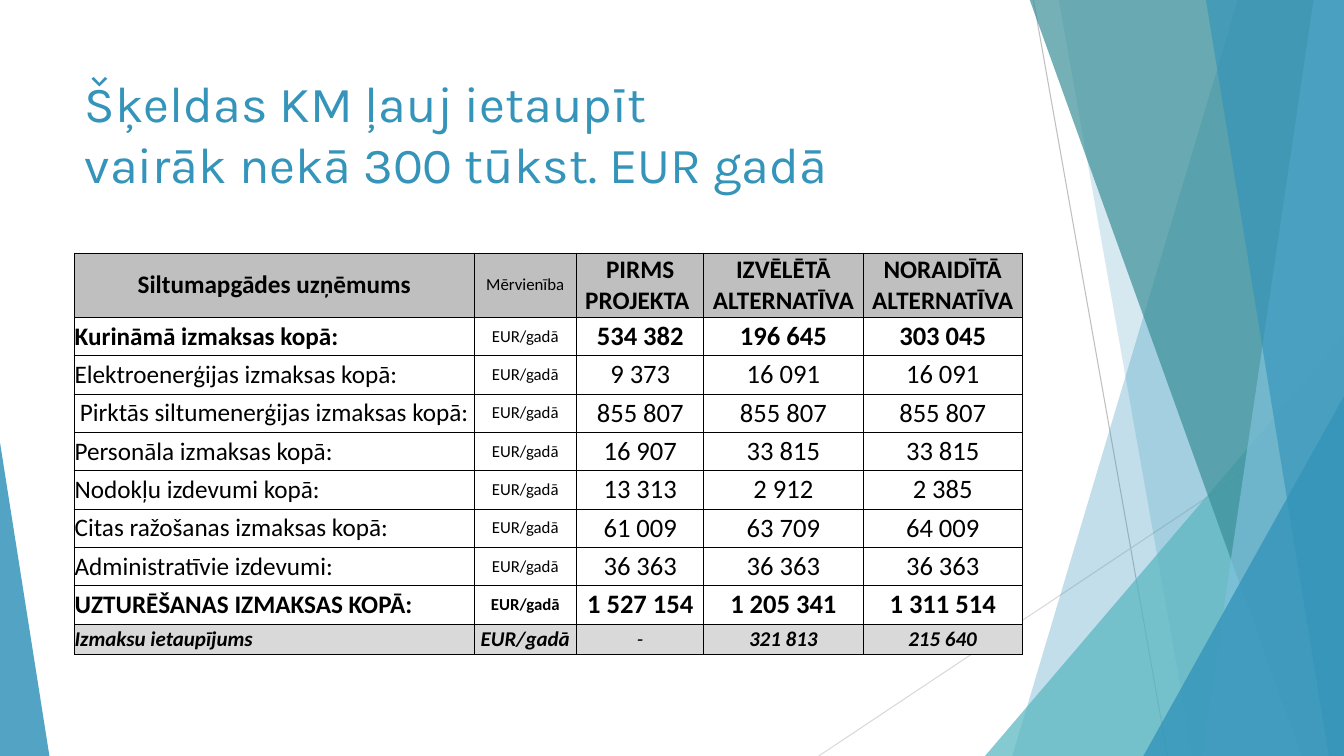
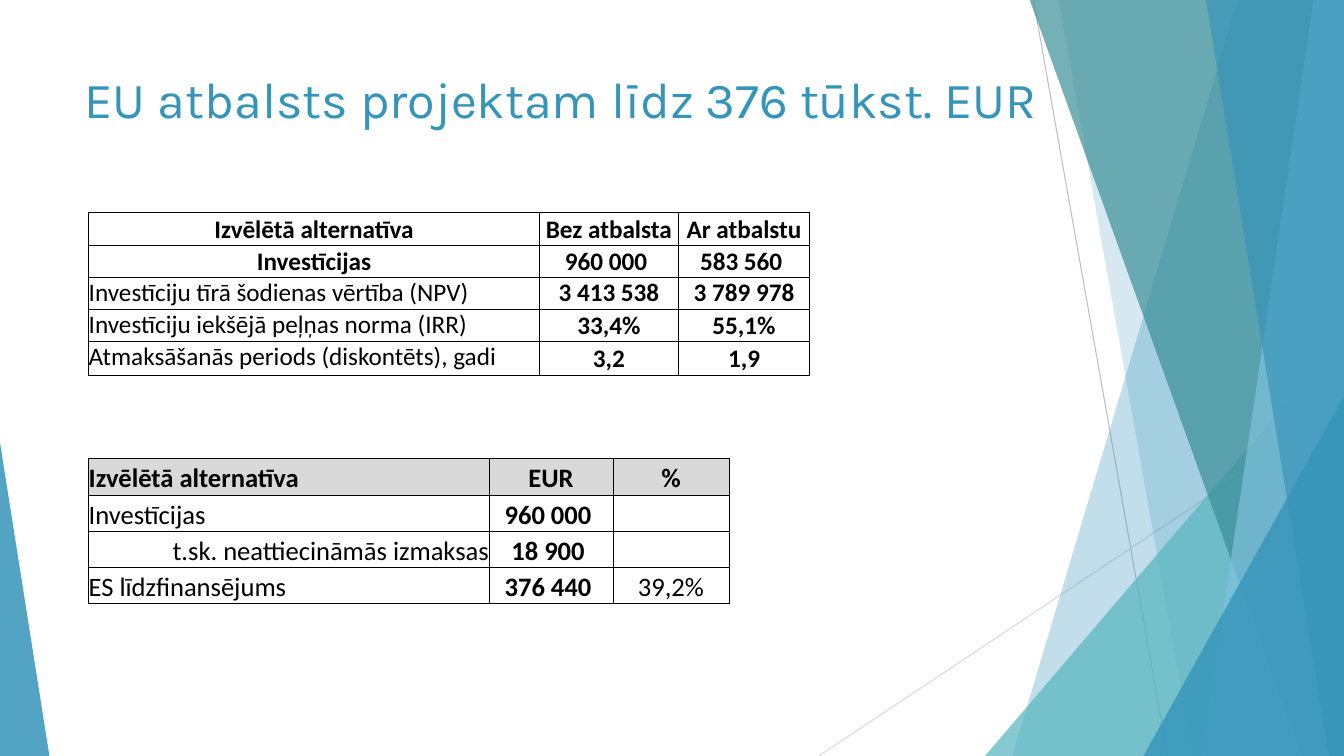
from pptx import Presentation
from pptx.dml.color import RGBColor
from pptx.enum.shapes import MSO_CONNECTOR, MSO_SHAPE
from pptx.enum.text import MSO_ANCHOR, MSO_AUTO_SIZE, PP_ALIGN
from pptx.oxml.ns import qn
from pptx.oxml.xmlchemy import OxmlElement
from pptx.util import Pt

PX = 9144
WIDE, HIGH = 1333, 750
LEFT, CENTER, RIGHT = PP_ALIGN.LEFT, PP_ALIGN.CENTER, PP_ALIGN.RIGHT
TOP, MIDDLE, BOTTOM = MSO_ANCHOR.TOP, MSO_ANCHOR.MIDDLE, MSO_ANCHOR.BOTTOM
STRAIGHT = MSO_CONNECTOR.STRAIGHT
PEAK = MSO_SHAPE.ISOSCELES_TRIANGLE
FIT = MSO_AUTO_SIZE.NONE
BLUE, AQUA, TEAL, SKY = "3494BA", "58B6C0", "3A8F98", "7FC1DB"
BLACK, WHITE, GREY, PALE = "000000", "FFFFFF", "BFBFBF", "D9D9D9"


def paint(color, shade):
    color.rgb = RGBColor.from_string(shade)


def grid(slide, left, top, cols, rows, data, rim):
    frame = slide.shapes.add_table(len(rows), len(cols), left * PX, top * PX,
                                   sum(cols) * PX, sum(rows) * PX)
    table = frame.table
    table.first_row = table.horz_banding = False
    for col, width in enumerate(cols):
        table.columns[col].width = width * PX
    for row, height in enumerate(rows):
        table.rows[row].height = height * PX
        for col, text in enumerate(data[row]):
            cell = table.cell(row, col)
            cell.margin_left = cell.margin_right = 0
            cell.margin_top = cell.margin_bottom = 0
            sides = {"L": col == 0, "R": col == len(cols) - 1,
                     "T": row == 0, "B": row == len(rows) - 1}
            for side, outer in sides.items():
                line = OxmlElement("a:ln" + side)
                line.set("w", str(Pt(rim if outer else 0.5)))
                fill = OxmlElement("a:solidFill")
                ink = OxmlElement("a:srgbClr")
                ink.set("val", BLACK)
                fill.append(ink)
                line.append(fill)
                cell._tc.get_or_add_tcPr().append(line)
            cell.fill.solid()
            paint(cell.fill.fore_color, WHITE)
            cell.text = text
            para = cell.text_frame.paragraphs[0]
            para.alignment = CENTER if col else LEFT
            para.font.name = "Calibri"
            para.font.size = Pt(18)
            para.font.bold = col > 0
            paint(para.font.color, BLACK)
            yield row, col, cell, para


deck = Presentation()
deck.slide_width, deck.slide_height = WIDE * PX, HIGH * PX
layout = deck.slide_layouts[5]

titles = [
    ("Šķeldas KM ļauj ietaupīt\vvairāk nekā 300 tūkst. EUR gadā", 67, 940, 144),
    ("EU atbalsts projektam līdz 376 tūkst. EUR", 63, 1056, 105),
]
slides = []
for text, top, width, height in titles:
    slide = deck.slides.add_slide(layout)
    title = slide.shapes.title
    title.left, title.top = 74 * PX, top * PX
    title.width, title.height = width * PX, height * PX
    frame = title.text_frame
    frame.text = text
    frame.auto_size = FIT
    frame.vertical_anchor = TOP
    para = frame.paragraphs[0]
    para.alignment = LEFT
    para.font.name = "Karla"
    para.font.size = Pt(36)
    paint(para.font.color, BLUE)
    slides.append(slide)
costs, aid = slides

decor = []
lines = [(1025, 0, 1158, HIGH, GREY), (WIDE, 403, 812, HIGH, PALE)]
for *ends, shade in lines:
    line = costs.shapes.add_connector(STRAIGHT, *[end * PX for end in ends])
    line.line.width = Pt(0.75)
    paint(line.line.color, shade)
    line.element.spPr.append(OxmlElement("a:effectLst"))
    decor.append(line)

facets = [
    (BLUE, 30, (1228, 1004)),
    (BLUE, 20, (1050, 1183)),
    (AQUA, 72, (977, 333, 356, 417, 1)),
    (TEAL, 70, (1021, 1291)),
    (SKY, 70, (1303, 1192)),
    (BLUE, 65, (1196, 1318)),
    (BLUE, 80, (1134, 393, 199, 357, 1)),
    (BLUE, 85, (0, 439, 49, 311, 0)),
]
for shade, alpha, form in facets:
    if len(form) == 2:
        head, foot = form
        path = costs.shapes.build_freeform(head, -1, PX)
        path.add_line_segments([(WIDE, -1), (WIDE, HIGH), (foot, HIGH)])
        facet = path.convert_to_shape()
    else:
        *box, apex = form
        facet = costs.shapes.add_shape(PEAK, *[side * PX for side in box])
        facet.adjustments[0] = apex
    facet.shadow.inherit = False
    facet.line.fill.background()
    facet.fill.solid()
    paint(facet.fill.fore_color, shade)
    clear = OxmlElement("a:alpha")
    clear.set("val", str(alpha * 1000))
    facet.element.find(".//" + qn("a:srgbClr")).append(clear)
    decor.append(facet)

for spot, shape in enumerate(decor):
    shape.element.find(".//" + qn("p:cNvPr")).set("id", str(100 + spot))
    layout.shapes.element.insert(2 + spot, shape.element)

unit = "EUR/gadā"
data = [
    ("Siltumapgādes uzņēmums", "Mērvienība", "PIRMS PROJEKTA ",
     "IZVĒLĒTĀ ALTERNATĪVA", "NORAIDĪTĀ ALTERNATĪVA"),
    ("Kurināmā izmaksas kopā:", unit, "534 382", "196 645", "303 045"),
    ("Elektroenerģijas izmaksas kopā:", unit, "9 373", "16 091", "16 091"),
    ("Pirktās siltumenerģijas izmaksas kopā:", unit,
     "855 807", "855 807", "855 807"),
    ("Personāla izmaksas kopā:", unit, "16 907", "33 815", "33 815"),
    ("Nodokļu izdevumi kopā:", unit, "13 313", "2 912", "2 385"),
    ("Citas ražošanas izmaksas kopā:", unit, "61 009", "63 709", "64 009"),
    ("Administratīvie izdevumi:", unit, "36 363", "36 363", "36 363"),
    ("UZTURĒŠANAS IZMAKSAS KOPĀ:", unit,
     "1 527 154", "1 205 341", "1 311 514"),
    ("Izmaksu ietaupījums", unit, "-", "321 813", "215 640"),
]
cols = [396, 102, 126, 158, 158]
rows = [64] + [38] * 8 + [30]
for row, col, cell, para in grid(costs, 74, 251, cols, rows, data, 0.5):
    cell.vertical_anchor = MIDDLE
    font = para.font
    font.bold = row in (0, 1, 8, 9)
    if row == 9:
        font.size = Pt(15)
        font.italic = True
        font.bold = col != 2
        paint(cell.fill.fore_color, PALE)
    elif col == 1:
        font.size = Pt(12)
        font.bold = row == 8
    elif row and col:
        font.size = Pt(19)
    if row == 0:
        paint(cell.fill.fore_color, GREY)
    if row in (0, 3):
        para.alignment = CENTER

data = [
    ("Izvēlētā alternatīva", "Bez atbalsta", "Ar atbalstu"),
    ("Investīcijas", "960 000 ", "583 560 "),
    ("Investīciju tīrā šodienas vērtība (NPV)", "3 413 538", "3 789 978"),
    ("Investīciju iekšējā peļņas norma (IRR)", "33,4%", "55,1%"),
    ("Atmaksāšanās periods (diskontēts), gadi", "3,2", "1,9"),
]
cols = [447, 138, 130]
rows = [32] * 4 + [34]
for row, col, cell, para in grid(aid, 88, 211, cols, rows, data, 1):
    if row < 2:
        cell.vertical_anchor = BOTTOM
        para.alignment = CENTER
        para.font.bold = True
    else:
        cell.vertical_anchor = MIDDLE if col else TOP

data = [
    ("Izvēlētā alternatīva", "EUR", "%"),
    ("Investīcijas", "960 000 ", ""),
    ("t.sk. neattiecināmās izmaksas", "18 900 ", ""),
    ("ES līdzfinansējums", "376 440 ", "39,2%"),
]
cols = [397, 123, 115]
rows = [36] * 4
for row, col, cell, para in grid(aid, 88, 455, cols, rows, data, 0.5):
    cell.vertical_anchor = BOTTOM
    para.font.size = Pt(19)
    para.font.bold = row == 0 or col == 1
    if row == 0:
        paint(cell.fill.fore_color, PALE)
    if (row, col) == (2, 0):
        para.alignment = RIGHT

deck.save("out.pptx")
